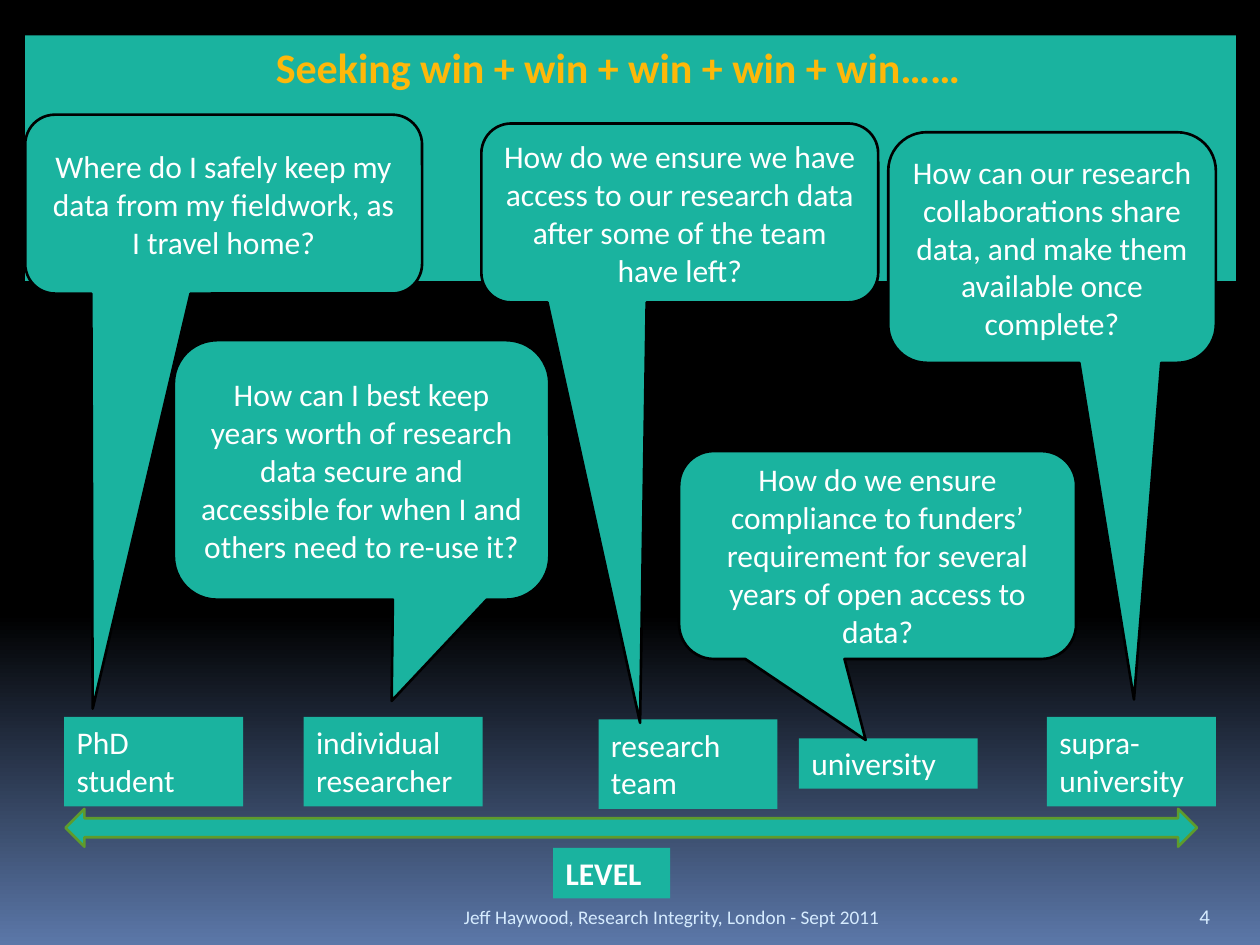
"""Build the slide on research data questions at each level of an institution."""
from copy import deepcopy

from pptx import Presentation
from pptx.dml.color import RGBColor
from pptx.enum.shapes import MSO_SHAPE as Shape
from pptx.enum.text import MSO_ANCHOR as Anchor, PP_ALIGN as Align
from pptx.util import Inches, Pt

COLORS = {
    "black": "000000",
    "horizon": "5B77A8",
    "teal": "1AB39F",
    "green": "5E9B2C",
    "white": "FFFFFF",
    "gold": "FEB80A",
    "pale": "D6ECFF",
}


def write(shape, text, size=18, color="white", bold=False, align=Align.LEFT, anchor=Anchor.TOP):
    frame = shape.text_frame
    frame.word_wrap = True
    frame.vertical_anchor = anchor
    frame.text = text
    para = frame.paragraphs[0]
    para.alignment = align
    span = para.runs[0]
    span.font.name = "Calibri"
    span.font.size = Pt(size)
    span.font.bold = bold
    span.font.color.rgb = RGBColor.from_string(COLORS[color])


def add_block(kind, left, top, width, height, line=None):
    shape = page.shapes.add_shape(kind, Inches(left), Inches(top), Inches(width), Inches(height))
    shape.shadow.inherit = False
    shape.fill.solid()
    shape.fill.fore_color.rgb = RGBColor.from_string(COLORS["teal"])
    if line:
        shape.line.color.rgb = RGBColor.from_string(COLORS[line])
        shape.line.width = Pt(1.5)
    else:
        shape.line.fill.background()
    return shape


deck = Presentation()
deck.slide_width, deck.slide_height = Inches(10), Inches(7.5)
page = deck.slides.add_slide(deck.slide_layouts[6])

sky = page.background.fill
sky.gradient()
sky.gradient_angle = 270
stop_list = page.element.xpath(".//a:gsLst")[0]
stop_list.append(deepcopy(stop_list[0]))
sky_stops = [(0, "black"), (0.65, "black"), (1, "horizon")]
for stop, (position, color) in zip(sky.gradient_stops, sky_stops):
    stop.position = position
    stop.color.rgb = RGBColor.from_string(COLORS[color])

footers = [
    ("Jeff Haywood, Research Integrity, London - Sept 2011", 1, 6.08, 11, Align.RIGHT),
    ("4", 9.42, 0.5, 12, Align.LEFT),
]
for text, left, width, size, align in footers:
    box = page.shapes.add_textbox(Inches(left), Inches(7.02), Inches(width), Inches(0.4))
    write(box, text, size, "pale", align=align, anchor=Anchor.BOTTOM)

write(add_block(Shape.RECTANGLE, 4.39, 6.73, 0.93, 0.4), "LEVEL", bold=True)
add_block(Shape.RECTANGLE, 0.2, 0.28, 9.61, 1.95)
add_block(Shape.LEFT_RIGHT_ARROW, 0.52, 6.42, 8.98, 0.3, "green")

levels = [
    ("PhD student", 0.51, 5.69, 1.42, 0.71),
    ("university", 6.34, 5.86, 1.42, 0.4),
    ("research team", 4.75, 5.71, 1.42, 0.71),
    ("individual researcher", 2.41, 5.69, 1.42, 0.71),
    ("supra-university", 8.31, 5.69, 1.34, 0.71),
]
for text, *place in levels:
    write(add_block(Shape.RECTANGLE, *place), text)

questions = [
    ("Where do I safely keep my data from my fieldwork, as I travel home?",
     (0.2, 0.91, 3.15, 1.42), (-0.33, 2.82)),
    ("How can I best keep years worth of research data secure and accessible "
     "for when I and others need to re-use it?",
     (1.38, 2.7, 2.98, 2.06), (0.08, 0.89)),
    ("How do we ensure compliance to funders’ requirement for several years "
     "of open access to data?",
     (5.39, 3.58, 3.15, 1.65), (-0.03, 0.89)),
    ("How do we ensure we have access to our research data after some of the team have left?",
     (3.82, 0.98, 3.15, 1.42), (-0.1, 2.85)),
    ("How can our research collaborations share data, and make them available once complete?",
     (7.05, 1.05, 2.6, 1.83), (0.25, 1.96)),
]
for text, place, tip in questions:
    callout = add_block(Shape.ROUNDED_RECTANGULAR_CALLOUT, *place, line="black")
    callout.adjustments[0], callout.adjustments[1] = tip
    write(callout, text, align=Align.CENTER, anchor=Anchor.MIDDLE)

title = page.shapes.add_textbox(Inches(2.09), Inches(0.28), Inches(5.98), Inches(0.51))
write(title, "Seeking win + win + win + win + win……", 24, "gold", bold=True)

deck.save("out.pptx")
